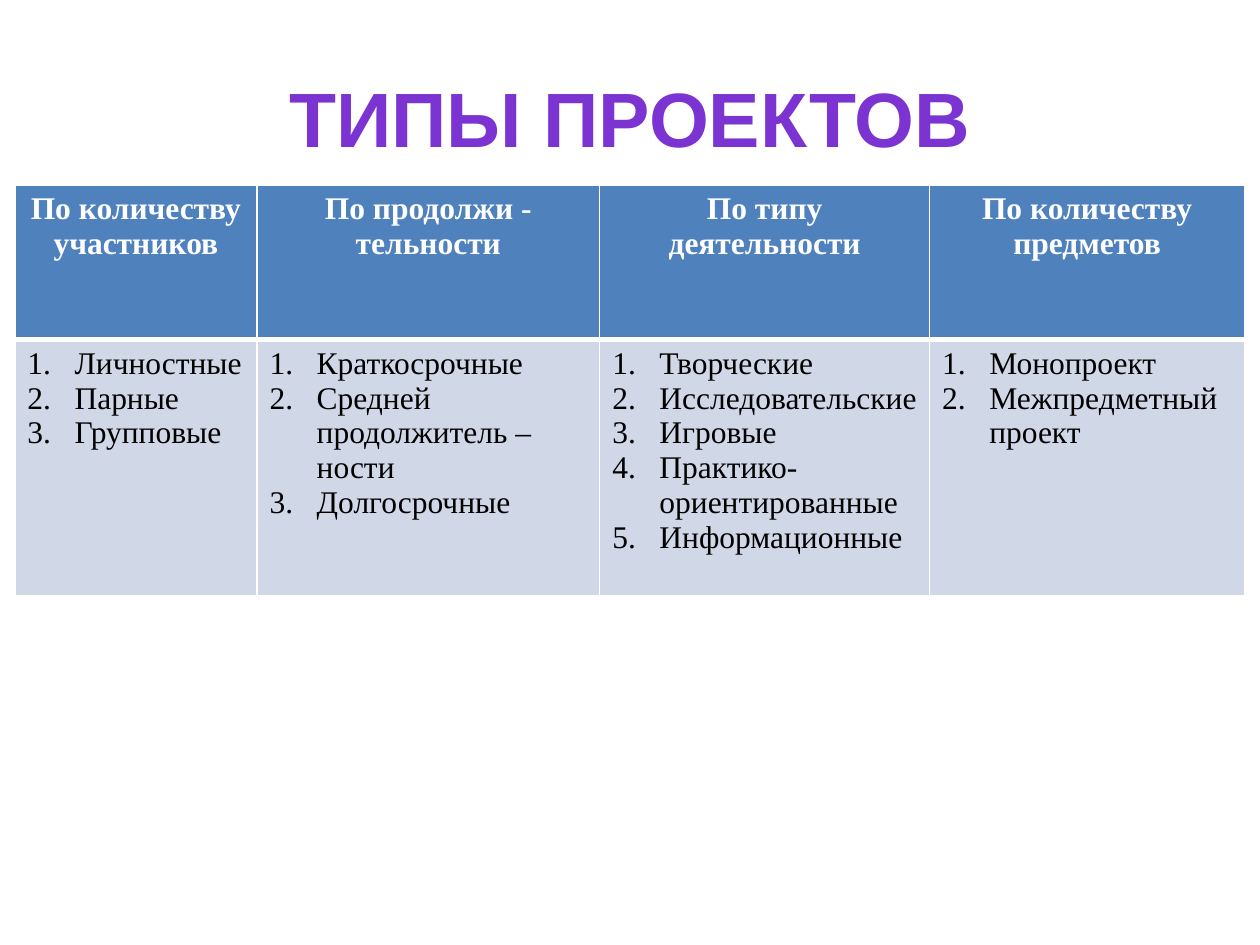
from dataclasses import dataclass

from lxml.etree import SubElement
from pptx import Presentation
from pptx.dml.color import RGBColor
from pptx.enum.text import MSO_ANCHOR, PP_ALIGN
from pptx.oxml.ns import qn
from pptx.util import Cm, Pt

WHITE = "FFFFFF"
BLACK = "000000"
PURPLE = "7B34D2"
HEADER_BLUE = "4F81BD"
BODY_BLUE = "D0D8E8"
NUMBER_INDENT = Cm(0.95)
HEADER_HEIGHT = Cm(3.12)
BODY_HEIGHT = Cm(5.16)


@dataclass
class ProjectGroup:
    heading: str
    types: list[str]
    width: Cm


GROUPS = [
    ProjectGroup("По количеству участников",
                 ["Личностные", "Парные", "Групповые"], Cm(4.88)),
    ProjectGroup("По продолжи - тельности",
                 ["Краткосрочные", "Средней продолжитель – ности", "Долгосрочные"],
                 Cm(6.91)),
    ProjectGroup("По типу деятельности",
                 ["Творческие", "Исследовательские", "Игровые",
                  "Практико-ориентированные", "Информационные"], Cm(6.65)),
    ProjectGroup("По количеству предметов",
                 ["Монопроект", "Межпредметный проект"], Cm(6.35)),
]


def color(value: str) -> RGBColor:
    return RGBColor.from_string(value)


def format_font(para, name: str, size: int, hex_color: str, bold: bool) -> None:
    for span in para.runs:
        span.font.name = name
        span.font.size = Pt(size)
        span.font.bold = bold
        span.font.color.rgb = color(hex_color)


def number_paragraph(para) -> None:
    properties = para._p.get_or_add_pPr()
    properties.set("marL", str(NUMBER_INDENT))
    properties.set("indent", str(-NUMBER_INDENT))
    SubElement(properties, qn("a:buFont"), typeface="+mj-lt")
    SubElement(properties, qn("a:buAutoNum"), type="arabicPeriod")


def style_cell(cell, fill: str, top: float, bottom: float) -> None:
    """Draw white borders, with top and bottom widths in points, and fill the cell."""
    properties = cell._tc.get_or_add_tcPr()
    for side, width in (("L", 1), ("R", 1), ("T", top), ("B", bottom)):
        line = SubElement(properties, qn(f"a:ln{side}"), w=str(Pt(width)))
        line_fill = SubElement(line, qn("a:solidFill"))
        SubElement(line_fill, qn("a:srgbClr"), val=WHITE)
    cell.fill.solid()
    cell.fill.fore_color.rgb = color(fill)


def add_title(page, text: str) -> None:
    box = page.shapes.add_textbox(Cm(1.27), Cm(0.76), Cm(22.86), Cm(3.18))
    frame = box.text_frame
    frame.word_wrap = True
    frame.vertical_anchor = MSO_ANCHOR.MIDDLE
    frame.text = text
    para = frame.paragraphs[0]
    para.alignment = PP_ALIGN.CENTER
    format_font(para, "Arial", 44, PURPLE, True)


def add_groups_table(page, groups: list[ProjectGroup]) -> None:
    table = page.shapes.add_table(
        2, len(groups), Cm(0.3), Cm(3.73),
        sum(group.width for group in groups), HEADER_HEIGHT + BODY_HEIGHT).table
    table.rows[0].height = HEADER_HEIGHT
    table.rows[1].height = BODY_HEIGHT
    for index, group in enumerate(groups):
        table.columns[index].width = group.width
        header, body = table.cell(0, index), table.cell(1, index)

        style_cell(header, HEADER_BLUE, top=1, bottom=3)
        header.text_frame.text = group.heading
        heading = header.text_frame.paragraphs[0]
        heading.alignment = PP_ALIGN.CENTER
        format_font(heading, "Times New Roman", 18, WHITE, True)

        style_cell(body, BODY_BLUE, top=3, bottom=1)
        body.text_frame.text = "\n".join(group.types)
        for para in body.text_frame.paragraphs:
            number_paragraph(para)
            format_font(para, "Times New Roman", 18, BLACK, False)


def main() -> None:
    deck = Presentation()
    deck.slide_width, deck.slide_height = Cm(25.4), Cm(19.05)
    page = deck.slides.add_slide(deck.slide_layouts[6])
    add_title(page, "ТИПЫ ПРОЕКТОВ")
    add_groups_table(page, GROUPS)
    deck.save("out.pptx")


if __name__ == "__main__":
    main()
